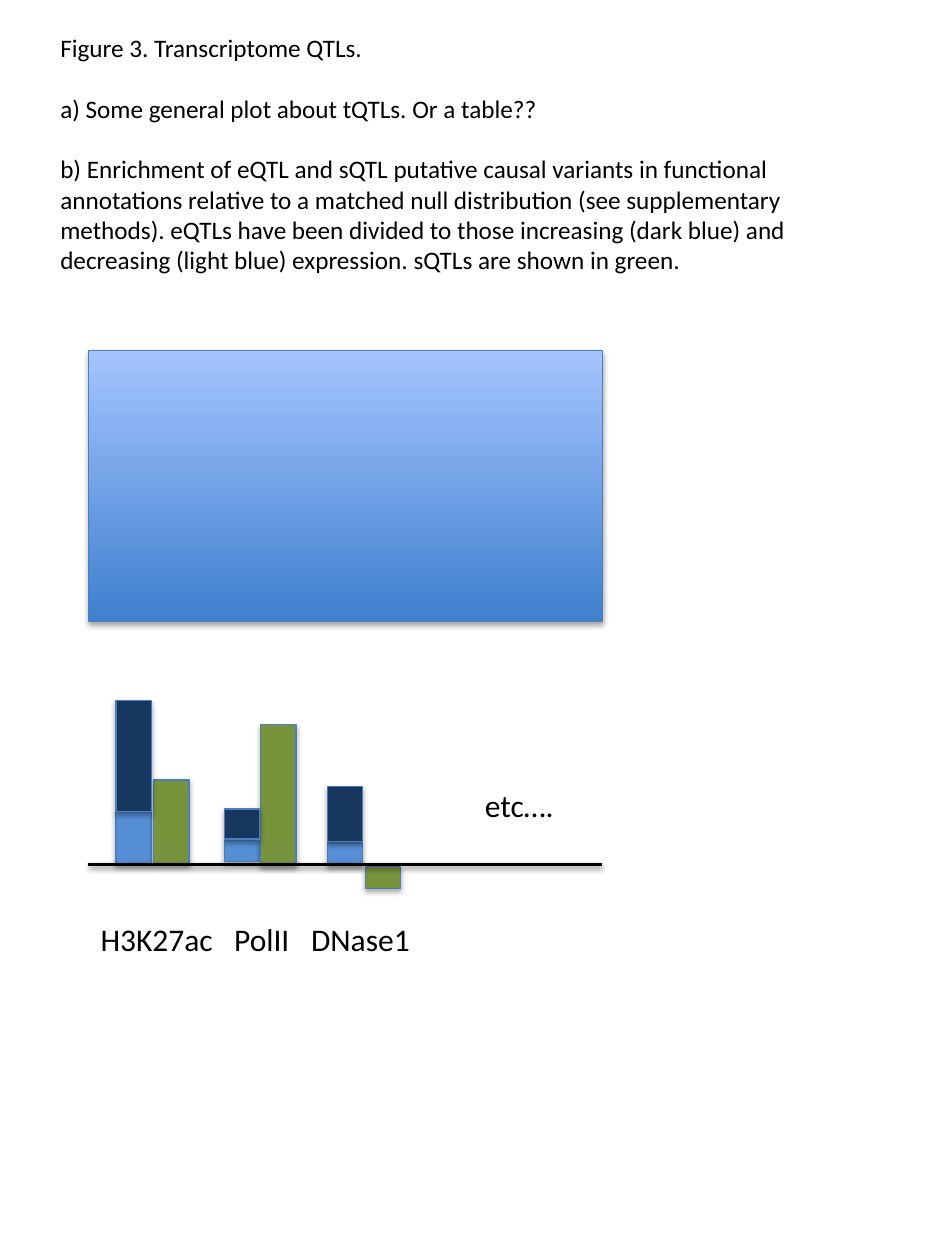
from lxml.etree import SubElement
from pptx import Presentation
from pptx.dml.color import RGBColor
from pptx.enum.shapes import MSO_CONNECTOR, MSO_SHAPE
from pptx.enum.text import MSO_ANCHOR
from pptx.oxml.ns import qn
from pptx.util import Inches, Pt

COLORS = {
    "text": "000000",
    "outline": "4B7EBC",
    "decreasing": "558ED5",
    "increasing": "17375E",
    "splicing": "77933C",
    "panel_bottom": "3F80CE",
    "panel_top": "A4C4FF",
}
CAPTION = [
    "Figure 3. Transcriptome QTLs.",
    "a) Some general plot about tQTLs. Or a table??",
    "b) Enrichment of eQTL and sQTL putative causal variants in functional "
    "annotations relative to a matched null distribution (see supplementary "
    "methods). eQTLs have been divided to those increasing (dark blue) and "
    "decreasing (light blue) expression. sQTLs are shown in green.",
]
# Left edge, then (column offset, top, height, colour) of each bar, in grid units
BAR_WIDTH = 2.8
BAR_GROUPS = [
    (9.2, [(0, 64.4, 4.2, "decreasing"), (3, 61.9, 6.7, "splicing"), (0, 55.6, 8.8, "increasing")]),
    (17.8, [(0, 66.7, 1.7, "decreasing"), (2.9, 57.5, 11.2, "splicing"), (0, 64.2, 2.4, "increasing")]),
    (26, [(0, 66.9, 1.8, "decreasing"), (3, 68.8, 1.7, "splicing"), (0, 62.4, 4.4, "increasing")]),
]
ANNOTATIONS = ["H3K27ac", "PolII", "DNase1"]
ANNOTATION_STOPS = [10.6, 16.7]
PLOT_LEFT, PLOT_WIDTH, BASELINE = 7, 40.8, 68.6


def rgb(name):
    return RGBColor.from_string(COLORS[name])


class FigurePage:
    """One slide on a grid of 75 columns by 100 rows."""

    def __init__(self, presentation, font="Calibri"):
        self.slide = presentation.slides.add_slide(presentation.slide_layouts[6])
        self.column = presentation.slide_width / 75
        self.row = presentation.slide_height / 100
        self.font = font

    def area(self, left, top, width, height):
        return (round(left * self.column), round(top * self.row),
                round(width * self.column), round(height * self.row))

    def shadow(self, effects, blur, distance, opacity):
        outer = SubElement(effects, qn("a:outerShdw"), blurRad=str(Pt(blur)),
                           dist=str(Pt(distance)), dir="5400000", rotWithShape="0")
        black = SubElement(outer, qn("a:srgbClr"), val="000000")
        SubElement(black, qn("a:alpha"), val=str(opacity * 1000))

    def rectangle(self, area, *fill_colors):
        """Two colours give a gradient from bottom to top."""
        box = self.slide.shapes.add_shape(MSO_SHAPE.RECTANGLE, *self.area(*area))
        if len(fill_colors) == 1:
            box.fill.solid()
            box.fill.fore_color.rgb = rgb(fill_colors[0])
        else:
            box.fill.gradient()
            box.fill.gradient_angle = 90
            for stop, color in zip(box.fill.gradient_stops, fill_colors):
                stop.color.rgb = rgb(color)
        box.line.color.rgb = rgb("outline")
        box.line.width = Pt(0.75)
        box.shadow.inherit = False
        self.shadow(box._element.spPr.find(qn("a:effectLst")), 3.1, 1.8, 35)

    def text(self, area, paragraphs, size, wrap=False, gap=0, tab_stops=()):
        frame = self.slide.shapes.add_textbox(*self.area(*area)).text_frame
        frame.word_wrap = wrap
        frame.vertical_anchor = MSO_ANCHOR.TOP
        frame.text = "\n".join(paragraphs)
        for paragraph in frame.paragraphs:
            paragraph.font.name = self.font
            paragraph.font.size = Pt(size)
            paragraph.font.color.rgb = rgb("text")
            paragraph.space_after = Pt(gap)
            if tab_stops:
                properties = paragraph._p.get_or_add_pPr()
                tabs = SubElement(properties, qn("a:tabLst"))
                properties.find(qn("a:defRPr")).addprevious(tabs)
                for stop in tab_stops:
                    SubElement(tabs, qn("a:tab"), pos=str(round(stop * self.column)), algn="l")

    def axis(self, left, width, level):
        x, y, length, _ = self.area(left, level, width, 0)
        line = self.slide.shapes.add_connector(MSO_CONNECTOR.STRAIGHT, x, y, x + length, y)
        line.line.color.rgb = rgb("text")
        line.line.width = Pt(2)
        self.shadow(SubElement(line._element.spPr, qn("a:effectLst")), 3.1, 1.6, 38)


def main():
    presentation = Presentation()
    presentation.slide_width, presentation.slide_height = Inches(7.5), Inches(10)
    page = FigurePage(presentation)

    page.text((3.8, 2.1, 67.5, 20.3), CAPTION, 14.4, wrap=True, gap=17.3)
    for group_left, bars in BAR_GROUPS:
        for offset, top, height, color in bars:
            page.rectangle((group_left + offset, top, BAR_WIDTH, height), color)
    page.text((PLOT_LEFT, 72.5, 26.8, 4), ["\t".join(ANNOTATIONS)], 18,
              tab_stops=ANNOTATION_STOPS)
    page.text((37.5, 61.9, 7.5, 4), ["etc…."], 18)
    page.axis(PLOT_LEFT, PLOT_WIDTH, BASELINE)
    page.rectangle((PLOT_LEFT, 27.8, PLOT_WIDTH, 21.5), "panel_bottom", "panel_top")

    presentation.save("out.pptx")


if __name__ == "__main__":
    main()
